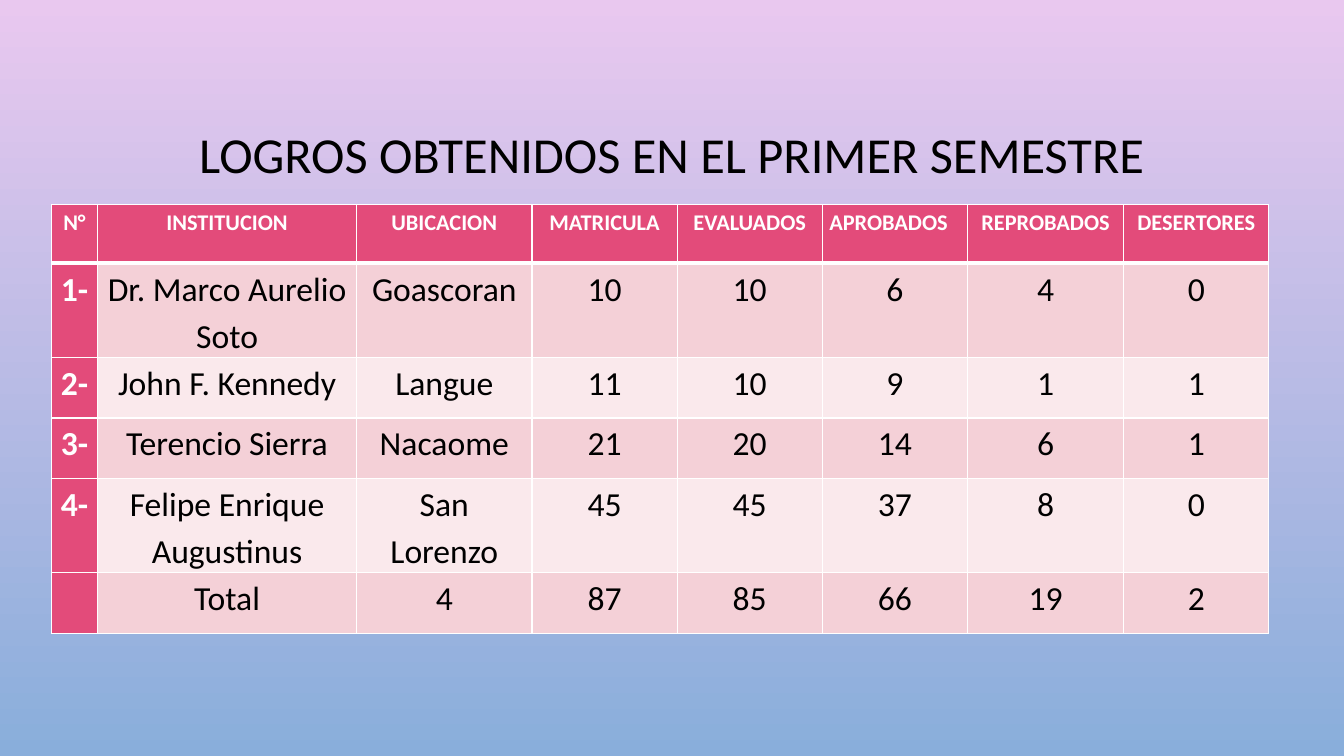
from pptx import Presentation
from pptx.dml.color import RGBColor
from pptx.enum import text
from pptx.oxml import parse_xml
from pptx.oxml.ns import nsdecls
from pptx.util import Pt

PINK_TOP = RGBColor(0xE9, 0xC8, 0xEF)
BLUE_BOTTOM = RGBColor(0x89, 0xAE, 0xDB)
ROSE = RGBColor(0xE3, 0x4B, 0x7A)
BAND_DARK = RGBColor(0xF4, 0xD0, 0xD7)
BAND_LIGHT = RGBColor(0xFA, 0xE9, 0xEC)
WHITE = RGBColor(0xFF, 0xFF, 0xFF)
BLACK = RGBColor(0x00, 0x00, 0x00)

COLUMN_WIDTHS = [33, 185, 125.3, 103.7, 103.7, 103.7, 111.6, 103.7]
HEADER_HEIGHT = 41.8
ROW_HEIGHT = 43.2
RESULTS = [
    ["N°", "INSTITUCION", "UBICACION", "MATRICULA", "EVALUADOS",
     "APROBADOS", "REPROBADOS", "DESERTORES"],
    ["1-", "Dr. Marco Aurelio Soto", "Goascoran", "10", "10", "6", "4", "0"],
    ["2-", "John F. Kennedy", "Langue", "11", "10", "9", "1", "1"],
    ["3-", "Terencio Sierra", "Nacaome", "21", "20", "14", "6", "1"],
    ["4-", "Felipe Enrique Augustinus", "San Lorenzo", "45", "45", "37", "8", "0"],
    ["", "Total", "4", "87", "85", "66", "19", "2"],
]


def write(frame, words, size, color=BLACK, bold=False, spacing=1.0,
          align=text.PP_ALIGN.CENTER):
    para = frame.paragraphs[0]
    para.alignment = align
    para.line_spacing = spacing
    if words:
        span = para.add_run()
        span.text = words
        span.font.name = "Calibri"
        span.font.size = Pt(size)
        span.font.bold = bold
        span.font.color.rgb = color


def set_borders(cell, **widths):
    properties = cell._tc.get_or_add_tcPr()
    for index, (side, width) in enumerate(widths.items()):
        properties.insert(index, parse_xml(
            f'<a:ln{side} {nsdecls("a")} w="{Pt(width)}"><a:solidFill>'
            f'<a:srgbClr val="{WHITE}"/></a:solidFill></a:ln{side}>'))


def paint_background(page):
    fill = page.background.fill
    fill.gradient()
    fill.gradient_angle = 270
    for stop, color in zip(fill.gradient_stops, (PINK_TOP, BLUE_BOTTOM)):
        stop.color.rgb = color


def add_title(page, words):
    title = page.shapes.title
    title.left, title.top, title.width, title.height = Pt(72), Pt(49), Pt(816), Pt(126)
    title.text_frame.vertical_anchor = text.MSO_ANCHOR.MIDDLE
    write(title.text_frame, words, 36, spacing=0.9)


def format_cell(cell, row, column, words):
    header = row == 0
    accent = header or column == 0
    cell.margin_left = cell.margin_right = Pt(5)
    cell.margin_top = cell.margin_bottom = Pt(0)
    cell.fill.solid()
    cell.fill.fore_color.rgb = ROSE if accent else BAND_DARK if row % 2 else BAND_LIGHT
    set_borders(cell, L=1, R=1, T=3 if row == 1 else 1, B=3 if header else 1)
    left = words == "APROBADOS"
    write(cell.text_frame, words, 16 if header else 24,
          color=WHITE if accent else BLACK, bold=accent, spacing=1.15,
          align=text.PP_ALIGN.LEFT if left else text.PP_ALIGN.CENTER)


def add_results(page, rows):
    heights = [HEADER_HEIGHT] + [ROW_HEIGHT] * (len(rows) - 1)
    table = page.shapes.add_table(
        len(rows), len(COLUMN_WIDTHS), Pt(36.7), Pt(146.2),
        Pt(sum(COLUMN_WIDTHS)), Pt(sum(heights))).table
    table.first_col = True
    for column, width in zip(table.columns, COLUMN_WIDTHS):
        column.width = Pt(width)
    for row, height in zip(table.rows, heights):
        row.height = Pt(height)
    for row, entries in enumerate(rows):
        for column, words in enumerate(entries):
            format_cell(table.cell(row, column), row, column, words)


def main():
    deck = Presentation()
    deck.slide_width, deck.slide_height = Pt(960), Pt(540)
    page = deck.slides.add_slide(deck.slide_layouts[5])
    paint_background(page)
    add_title(page, "LOGROS OBTENIDOS EN EL PRIMER SEMESTRE")
    add_results(page, RESULTS)
    deck.save("out.pptx")


if __name__ == "__main__":
    main()
